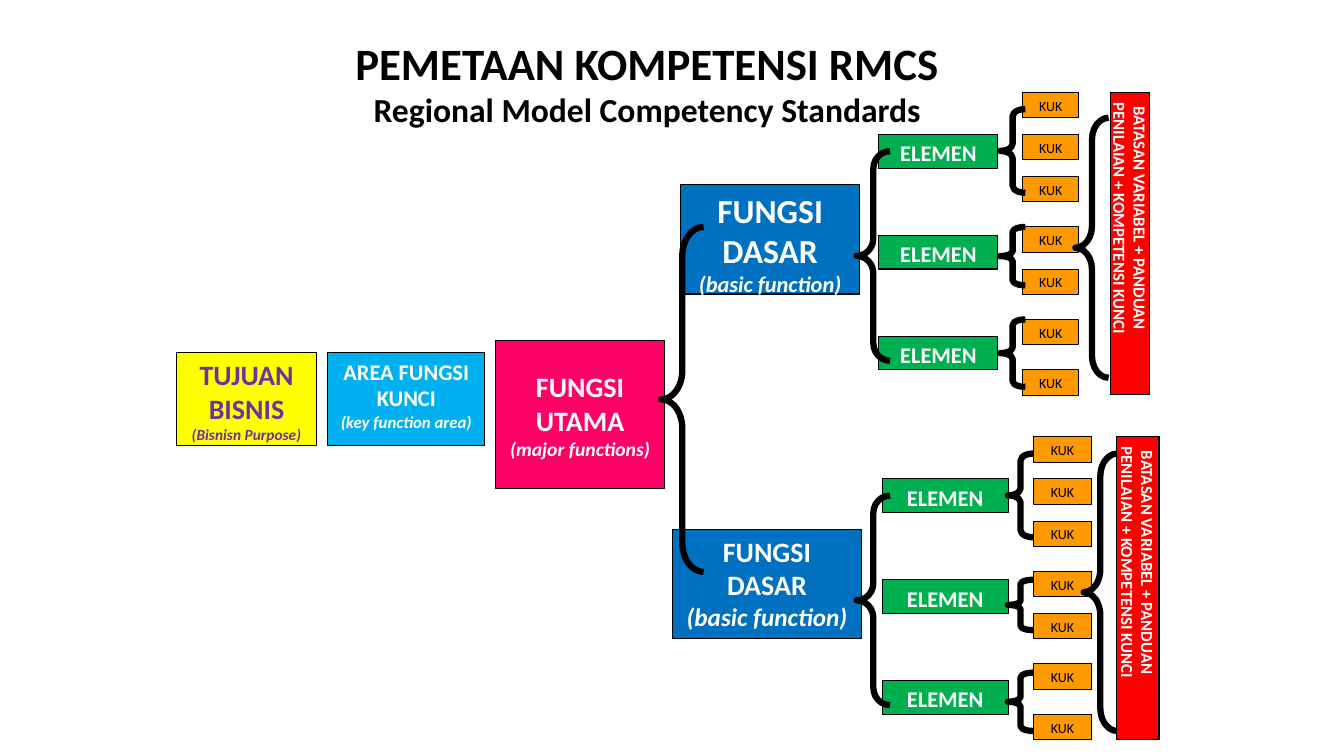
from dataclasses import dataclass

from pptx import Presentation
from pptx import util as u
from pptx.dml.color import RGBColor
from pptx.enum import shapes, text

FONT = "Calibri"
BLACK = RGBColor(0x00, 0x00, 0x00)
WHITE = RGBColor(0xFF, 0xFF, 0xFF)
YELLOW = RGBColor(0xFF, 0xFF, 0x00)
PURPLE = RGBColor(0x70, 0x30, 0xA0)
SKY = RGBColor(0x00, 0xB0, 0xF0)
PINK = RGBColor(0xFF, 0x00, 0x66)
BLUE = RGBColor(0x00, 0x70, 0xC0)
GREEN = RGBColor(0x00, 0xB0, 0x50)
ORANGE = RGBColor(0xFF, 0x99, 0x00)
RED = RGBColor(0xFF, 0x00, 0x00)

# Vertical offsets inside a branch, in cm
BASIC_OFFSET = 2.33
ELEMENT_OFFSETS = [1.06 + 2.54 * row for row in range(3)]
KUK_OFFSETS = [0, 1.06, 2.12, 3.39, 4.45, 5.72, 6.99]
BRANCH_HEIGHT = 7.62


@dataclass
class Branch:
    """One basic function; columns are (left, width), braces (offset, height)."""
    top: float
    basic: tuple
    basic_sizes: tuple
    element: tuple
    kuk: tuple
    scope: tuple
    kuk_brace_left: float
    kuk_braces: list
    scope_brace_left: float
    scope_brace: tuple


BRANCHES = [
    Branch(2.33, (17.15, 4.52), (24, 16), (22.15, 3.0), (25.78, 1.4), (27.99, 0.99),
           25.2, [(0.42, 2.11), (3.39, 1.47), (5.72, 1.7)], 27.1, (0.64, 6.55)),
    Branch(11.01, (16.94, 4.78), (20, 18), (22.23, 3.18), (26.04, 1.47), (28.14, 1.07),
           25.4, [(0.42, 2.11), (3.6, 1.27), (5.94, 1.47)], 27.31, (0.42, 6.99)),
]


def write_lines(text_frame, lines, color, bold=True):
    """Write centred (wording, size, italic) lines."""
    text_frame.text = "\n".join(wording for wording, _, _ in lines)
    for paragraph, (_, size, italic) in zip(text_frame.paragraphs, lines):
        paragraph.alignment = text.PP_ALIGN.CENTER
        font = paragraph.runs[0].font
        font.name, font.size = FONT, u.Pt(size)
        font.bold, font.italic = bold, italic
        font.color.rgb = color


def add_box(slide, left, top, width, height, fill, lines, color=WHITE, bold=True):
    shape = slide.shapes.add_shape(shapes.MSO_SHAPE.RECTANGLE, u.Cm(left), u.Cm(top),
                                   u.Cm(width), u.Cm(height))
    shape.shadow.inherit = False
    shape.fill.solid()
    shape.fill.fore_color.rgb = fill
    shape.line.color.rgb = BLACK
    shape.line.width = u.Pt(0.75)
    shape.text_frame.word_wrap = True
    shape.text_frame.vertical_anchor = text.MSO_ANCHOR.TOP
    write_lines(shape.text_frame, lines, color, bold)
    return shape


def add_brace(slide, left, top, width, height):
    shape = slide.shapes.add_shape(shapes.MSO_SHAPE.LEFT_BRACE, u.Cm(left), u.Cm(top),
                                   u.Cm(width), u.Cm(height))
    shape.shadow.inherit = False
    shape.adjustments[0] = height / width / 12
    shape.adjustments[1] = 0.5
    shape.fill.background()
    shape.line.color.rgb = BLACK
    shape.line.width = u.Pt(4.5)


def add_title(slide):
    title = slide.shapes.title
    title.left, title.top = u.Cm(6.15), u.Cm(0.76)
    title.width, title.height = u.Cm(20.32), u.Cm(2.64)
    title.text_frame.auto_size = text.MSO_AUTO_SIZE.NONE
    title.text_frame.vertical_anchor = text.MSO_ANCHOR.TOP
    write_lines(title.text_frame, [("PEMETAAN KOMPETENSI RMCS", 32, False),
                                   ("Regional Model Competency Standards", 24, False)], BLACK)


def add_branch(slide, branch):
    # Boxes
    left, width = branch.basic
    heading_size, note_size = branch.basic_sizes
    add_box(slide, left, branch.top + BASIC_OFFSET, width, 2.75, BLUE,
            [("FUNGSI DASAR", heading_size, False), ("(basic function)", note_size, True)])
    left, width = branch.element
    for offset in ELEMENT_OFFSETS:
        add_box(slide, left, branch.top + offset, width, 0.85, GREEN, [("ELEMEN", 16, False)])
    left, width = branch.kuk
    for offset in KUK_OFFSETS:
        add_box(slide, left, branch.top + offset, width, 0.64, ORANGE,
                [("KUK", 10, False)], BLACK, bold=False)

    # Vertical scope bar
    left, width = branch.scope
    scope = add_box(slide, left, branch.top, width, BRANCH_HEIGHT, RED,
                    [("BATASAN VARIABEL + PANDUAN PENILAIAN + KOMPETENSI KUNCI", 12, False)])
    scope.text_frame.vertical_anchor = text.MSO_ANCHOR.MIDDLE
    scope.text_frame._txBody.bodyPr.set("vert", "eaVert")

    # Braces
    add_brace(slide, 21.59, branch.top + 1.48, 0.84, 5.28)
    for offset, height in branch.kuk_braces:
        add_brace(slide, branch.kuk_brace_left, branch.top + offset, 0.64, height)
    offset, height = branch.scope_brace
    add_brace(slide, branch.scope_brace_left, branch.top + offset, 0.84, height)


def main():
    presentation = Presentation()
    presentation.slide_width, presentation.slide_height = u.Cm(33.87), u.Cm(19.05)
    slide = presentation.slides.add_slide(presentation.slide_layouts[5])
    add_title(slide)

    # Purpose, key area and major function
    add_box(slide, 4.45, 8.89, 3.53, 2.34, YELLOW,
            [("TUJUAN BISNIS", 20, False), ("(Bisnisn Purpose)", 11, True)], PURPLE)
    add_box(slide, 8.26, 8.89, 3.96, 2.34, SKY,
            [("AREA FUNGSI KUNCI", 16, False), ("(key function area)", 12, True)])
    major = add_box(slide, 12.5, 8.59, 4.24, 3.71, PINK,
                    [("FUNGSI UTAMA", 20, False), ("(major functions)", 14, True)])
    major.text_frame.margin_top = u.Cm(0.73)

    # Branches and the brace that joins them
    for branch in BRANCHES:
        add_branch(slide, branch)
    add_brace(slide, 16.66, 5.72, 1.07, 8.69)

    presentation.save("out.pptx")


if __name__ == "__main__":
    main()
